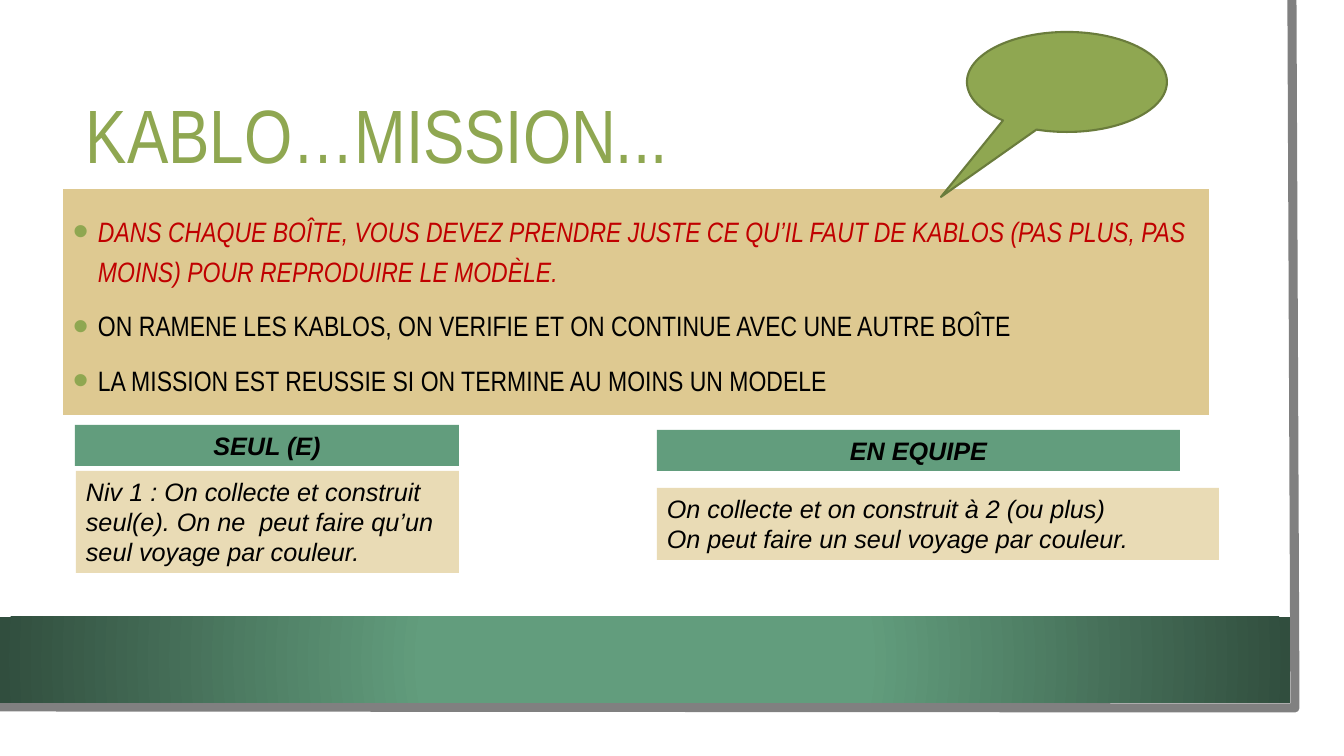
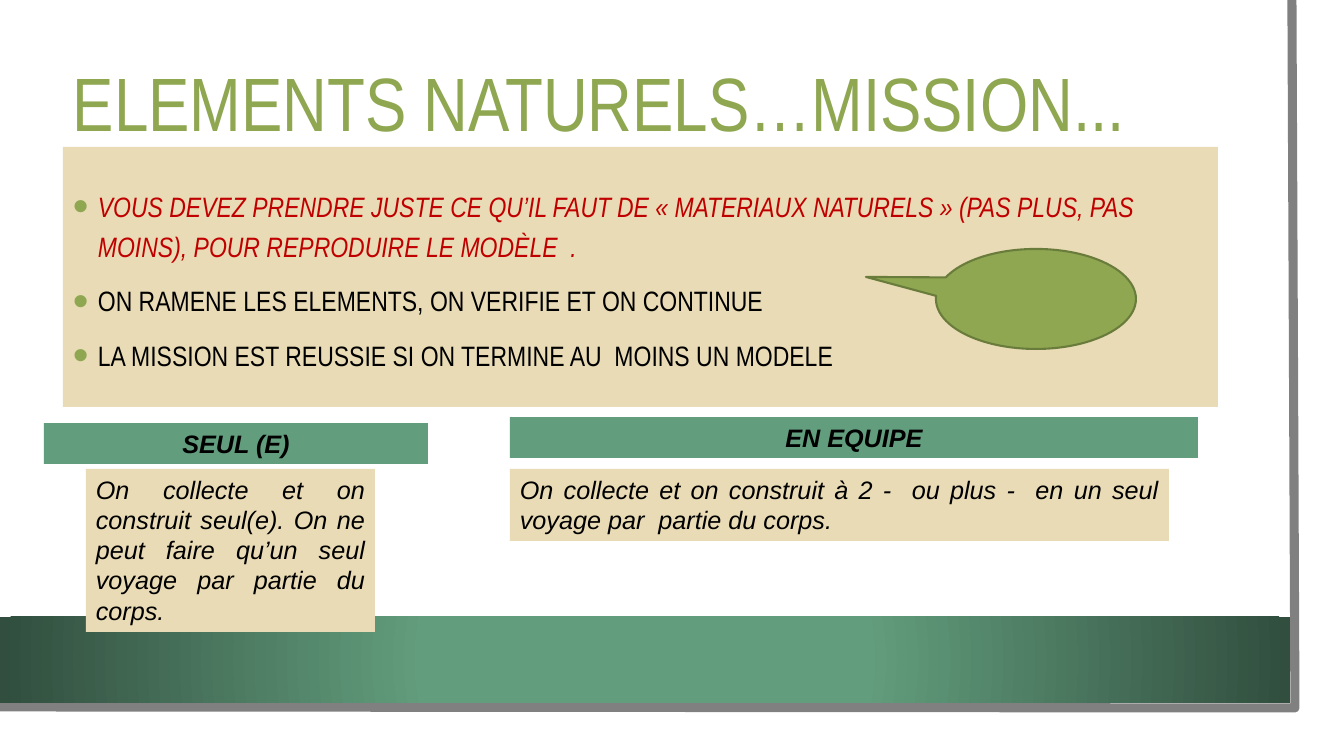
from lxml import etree
from pptx import Presentation
from pptx.dml.color import RGBColor
from pptx.enum.shapes import MSO_SHAPE
from pptx.enum.text import MSO_ANCHOR, PP_ALIGN
from pptx.oxml.ns import qn
from pptx.util import Pt

RECT, BUBBLE = MSO_SHAPE.RECTANGLE, MSO_SHAPE.OVAL_CALLOUT
TOP, MIDDLE = MSO_ANCHOR.TOP, MSO_ANCHOR.MIDDLE
LEFT, CENTER, JUSTIFY = PP_ALIGN.LEFT, PP_ALIGN.CENTER, PP_ALIGN.JUSTIFY

OLIVE = RGBColor(0x8F, 0xA7, 0x51)
MOSS = RGBColor(0x6A, 0x7C, 0x3C)
GREEN = RGBColor(0x62, 0x9D, 0x7D)
PINE = RGBColor(0x31, 0x4E, 0x3E)
SAND = RGBColor(0xDE, 0xC9, 0x91)
CREAM = RGBColor(0xE9, 0xDB, 0xB5)
RED = RGBColor(0xC0, 0x00, 0x00)
BLACK = RGBColor(0x00, 0x00, 0x00)
GRAY = RGBColor(0x80, 0x80, 0x80)

WIDE, HIGH = 1344, 756
SCALE = 12192000 / WIDE
NARROW, SANS = "Arial Narrow", "Arial"

SLIDES = [
    {
        "title": ("KABLO…MISSION...", (76, 76, 1146, 127)),
        "rules": [
            "DANS CHAQUE BOÎTE, VOUS DEVEZ PRENDRE JUSTE CE QU’IL FAUT DE KABLOS (PAS PLUS, PAS MOINS) POUR REPRODUIRE LE MODÈLE.",
            "ON RAMENE LES KABLOS, ON VERIFIE ET ON CONTINUE AVEC UNE AUTRE BOÎTE",
            "LA MISSION EST REUSSIE SI ON TERMINE AU MOINS UN MODELE",
        ],
        "panel": ((63, 189, 1146, 226), SAND),
        "align": LEFT,
        "notes": [
            (["Niv 1 : On collecte et construit seul(e). On ne  peut faire qu’un seul voyage par couleur."],
             (76, 471, 383, 102)),
            (["On collecte et on construit à 2 (ou plus)",
              "On peut faire un seul voyage par couleur."],
             (657, 488, 562, 72)),
        ],
        "bubble": ((967, 32), (-0.63, 1.15)),
        "labels": [("SEUL (E)", (75, 425, 384, 41)),
                   ("EN EQUIPE", (657, 430, 523, 41))],
    },
    {
        "title": ("ELEMENTS NATURELS…MISSION...", (63, 44, 1146, 127)),
        "rules": [
            "VOUS DEVEZ PRENDRE JUSTE CE QU’IL FAUT DE « MATERIAUX NATURELS » (PAS PLUS, PAS MOINS), POUR REPRODUIRE LE MODÈLE  .",
            "ON RAMENE LES ELEMENTS, ON VERIFIE ET ON CONTINUE",
            "LA MISSION EST REUSSIE SI ON TERMINE AU  MOINS UN MODELE",
        ],
        "panel": ((63, 147, 1155, 260), CREAM),
        "align": JUSTIFY,
        "notes": [
            (["On collecte et on construit seul(e). On ne peut faire qu’un seul voyage par partie du corps."],
             (86, 469, 289, 163)),
            (["On collecte et on construit à 2 -  ou plus -  en un seul voyage par  partie du corps."],
             (510, 469, 659, 72)),
        ],
        "bubble": ((936, 249), (-0.85, -0.22)),
        "labels": [("SEUL (E)", (44, 423, 384, 41)),
                   ("EN EQUIPE", (510, 417, 688, 41))],
    },
]


def px(*vals):
    return [round(v * SCALE) for v in vals]


def dot(para):
    props = para._p.get_or_add_pPr()
    inset = px(25)[0]
    props.set("marL", str(inset))
    props.set("indent", str(-inset))
    tint = etree.SubElement(props, qn("a:buClr"))
    etree.SubElement(tint, qn("a:srgbClr"), val=str(OLIVE))
    etree.SubElement(props, qn("a:buSzPct"), val="160000")
    etree.SubElement(props, qn("a:buFont"), typeface=SANS)
    etree.SubElement(props, qn("a:buChar"), char="•")


def write(slide, lines, box, size=18, face=SANS, tints=(BLACK,), slants=(True,),
          bold=False, fill=None, align=LEFT, anchor=TOP, space=1.0, gap=0, dots=False):
    shape = slide.shapes.add_textbox(*px(*box))
    if fill is not None:
        shape.fill.solid()
        shape.fill.fore_color.rgb = fill
    frame = shape.text_frame
    frame.word_wrap = True
    frame.vertical_anchor = anchor
    for i, line in enumerate(lines):
        para = frame.paragraphs[0] if i == 0 else frame.add_paragraph()
        if dots:
            dot(para)
        para.alignment = align
        para.line_spacing = space
        para.space_before = Pt(gap if i else 0)
        run = para.add_run()
        run.text = line
        font = run.font
        font.name, font.size, font.bold = face, Pt(size), bold
        font.italic = slants[min(i, len(slants) - 1)]
        font.color.rgb = tints[min(i, len(tints) - 1)]


def decor(slide):
    path = slide.shapes.build_freeform(1292, 0, scale=SCALE)
    path.add_line_segments([(1295, 708), (-3, 707)], close=False)
    edge = path.convert_to_shape()
    edge.shadow.inherit = False
    edge.fill.background()
    edge.line.color.rgb = GRAY
    edge.line.width = Pt(6.5)

    band = slide.shapes.add_shape(RECT, *px(0, 617, 1290, 86))
    band.shadow.inherit = False
    band.line.fill.background()
    band.fill.gradient()
    for stop, tint, place in zip(band.fill.gradient_stops, (GREEN, PINE), (0.34, 1)):
        stop.color.rgb = tint
        stop.position = place
    grad = band._element.spPr.find(qn("a:gradFill"))
    grad.remove(grad.find(qn("a:lin")))
    ring = etree.SubElement(grad, qn("a:path"), {"path": "circle"})
    etree.SubElement(ring, qn("a:fillToRect"), dict.fromkeys("ltrb", "50000"))


def speech(slide, spot, tip):
    shape = slide.shapes.add_shape(BUBBLE, *px(*spot, 200, 100))
    shape.shadow.inherit = False
    shape.fill.solid()
    shape.fill.fore_color.rgb = OLIVE
    shape.line.color.rgb = MOSS
    shape.line.width = Pt(1.5)
    for i, value in enumerate(tip):
        shape.adjustments[i] = value


def build(slide, data):
    decor(slide)
    title, box = data["title"]
    write(slide, [title], box, size=54, face=NARROW, tints=(OLIVE,),
          slants=(False,), anchor=MIDDLE, space=0.9)
    box, fill = data["panel"]
    write(slide, data["rules"], box, size=20, face=NARROW, tints=(RED, BLACK),
          slants=(True, False), fill=fill, anchor=MIDDLE, space=1.2, gap=10, dots=True)
    for lines, box in data["notes"]:
        write(slide, lines, box, fill=CREAM, align=data["align"])
    speech(slide, *data["bubble"])
    for label, box in data["labels"]:
        write(slide, [label], box, bold=True, fill=GREEN, align=CENTER)


def main():
    deck = Presentation()
    deck.slide_width, deck.slide_height = px(WIDE, HIGH)
    for data in SLIDES:
        build(deck.slides.add_slide(deck.slide_layouts[6]), data)
    deck.save("out.pptx")


if __name__ == "__main__":
    main()
